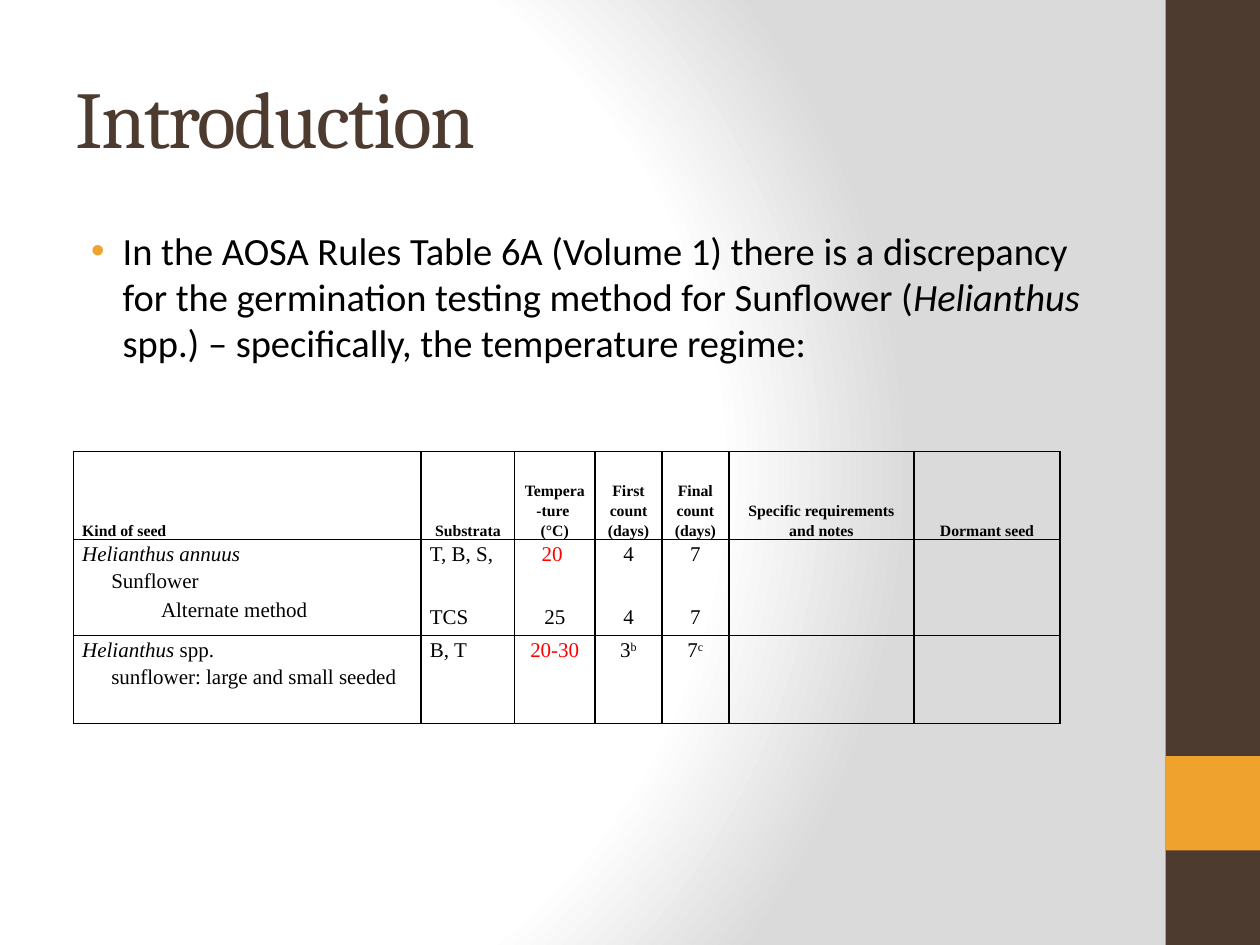
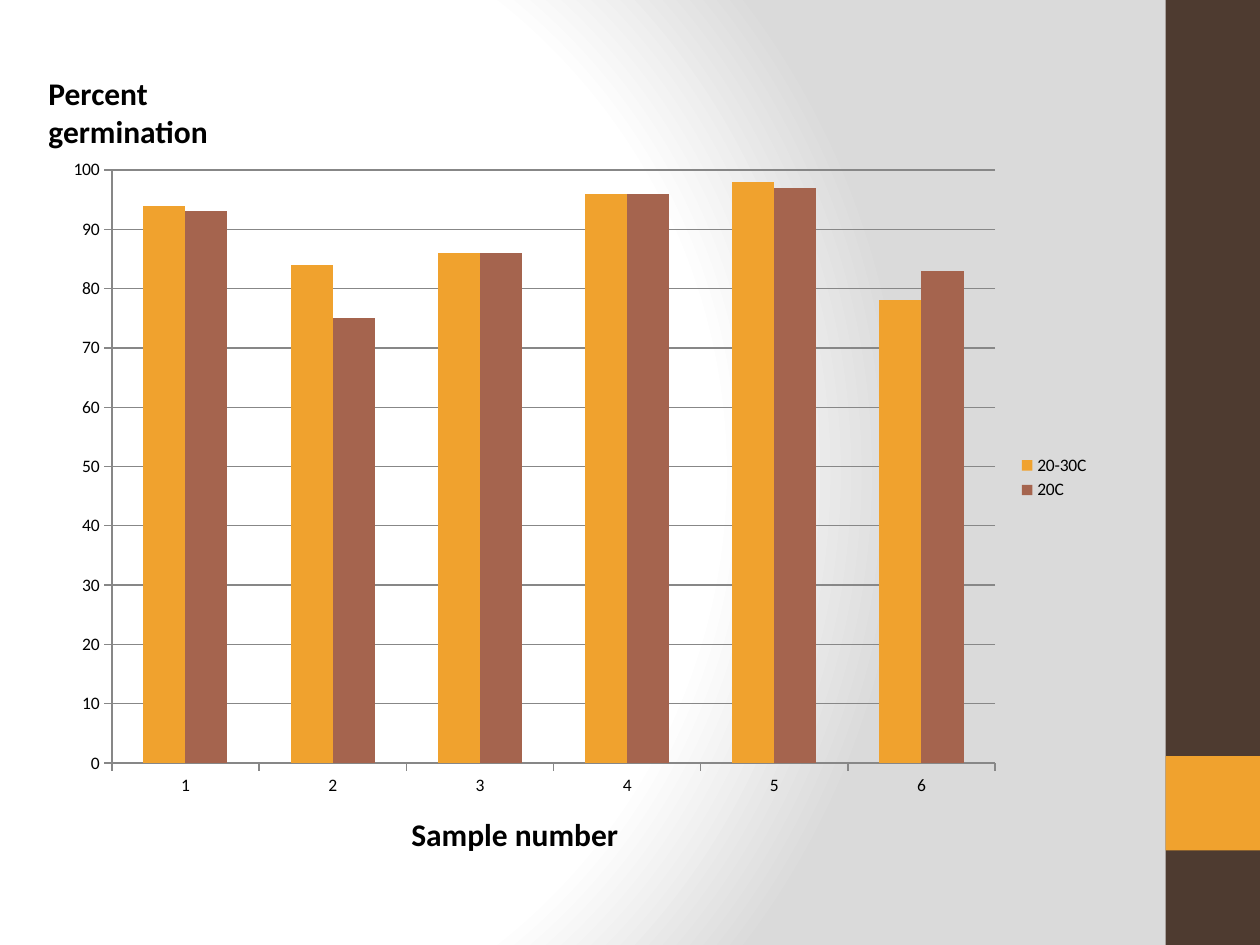
from dataclasses import dataclass
from typing import NamedTuple

from lxml import etree
from pptx import Presentation
from pptx import slide as s
from pptx import table as t
from pptx import util as u
from pptx.chart import data as d
from pptx.dml import color as c
from pptx.enum import chart as ch
from pptx.enum import shapes as sh
from pptx.enum import text as tx
from pptx.oxml import ns, parse_xml
from pptx.text import text as tt

Pt = u.Pt
CENTER = tx.PP_ALIGN.CENTER
LEFT = tx.PP_ALIGN.LEFT


@dataclass(frozen=True)
class Theme:
    brown: str = "4E3B30"
    orange: str = "F0A22E"
    rust: str = "A5644E"
    red: str = "FF0000"
    black: str = "000000"
    white: str = "FFFFFF"
    gray: str = "DADADA"
    grid: str = "878787"
    title_font: str = "Cambria"
    body_font: str = "Calibri"
    table_font: str = "Times New Roman"
    title_size: float = 46
    body_size: float = 22
    label_size: float = 18
    cell_size: float = 12
    chart_size: float = 10
    header_size: float = 9


THEME = Theme()


class Area(NamedTuple):
    left: float
    top: float
    width: float
    height: float

    def lengths(self) -> list[u.Length]:
        return [Pt(value) for value in self]


class Band(NamedTuple):
    area: Area
    color: str


class Span(NamedTuple):
    text: str
    italic: bool = False
    color: str = THEME.black
    raised: bool = False


class Line(NamedTuple):
    spans: tuple[Span, ...]
    indent: float = 0
    before: float = 0
    after: float = 0


class Label(NamedTuple):
    text: str
    area: Area
    size: float
    indent: float = 0
    font: str = THEME.body_font
    color: str = THEME.black
    bold: bool = True
    anchor: tx.MSO_ANCHOR = tx.MSO_ANCHOR.TOP


BANDS = (
    Band(Area(666, 0, 54, 540), THEME.brown),
    Band(Area(666, 432, 54, 54), THEME.orange),
)
TITLE = Label("Introduction", Area(36, 21.6, 600, 90), THEME.title_size, 0,
              THEME.title_font, THEME.brown, False, tx.MSO_ANCHOR.MIDDLE)
BODY_AREA = Area(36, 126, 600, 144)
BODY = Line((
    Span("In the AOSA Rules Table 6A (Volume 1) there is a discrepancy "
         "for the germination testing method for Sunflower ("),
    Span("Helianthus ", italic=True),
    Span("spp.) – specifically, the temperature regime:"),
))

TABLE_AREA = Area(42, 258, 563.8, 155.5)
COLUMN_WIDTHS = (198.7, 53.3, 46.1, 38.2, 38.2, 105.8, 83.5)
ROW_HEIGHTS = (50.4, 54.7, 50.4)
HEADERS = (
    ("Kind of seed",), ("Substrata",), ("Tempera-ture ", "(°C)"),
    ("First count (days)",), ("Final count (days)",),
    ("Specific requirements and notes",), ("Dormant seed",),
)


def value(*spans: Span, before: float = 1.3) -> Line:
    return Line(spans, before=before, after=1.4)


def alternate(text: str) -> Line:
    return value(Span(text), before=19.3)


SEED_ROWS = (
    (
        (Line((Span("Helianthus annuus", italic=True),), before=1.3),
         Line((Span("Sunflower"),), indent=16.6, after=1.4),
         Line((Span("Alternate method"),), indent=45, after=1.4)),
        (value(Span("T, B, S,")), alternate("TCS")),
        (value(Span("20 ", color=THEME.red)), alternate("25")),
        (value(Span("4")), alternate("4")),
        (value(Span("7")), alternate("7")),
    ),
    (
        (Line((Span("Helianthus ", italic=True), Span("spp.")), before=1.3),
         Line((Span("sunflower: large and small seeded"),), indent=16.6, after=1.4)),
        (value(Span("B, T")),),
        (value(Span("20-30", color=THEME.red)),),
        (value(Span("3"), Span("b", raised=True)),),
        (value(Span("7"), Span("c", raised=True)),),
    ),
)

CHART_AREA = Area(30, 84, 600, 378)
GERMINATION = {
    "20-30C": ((94, 84, 86, 96, 98, 78), THEME.orange),
    "20C": ((93, 75, 86, 96, 97, 83), THEME.rust),
}
AXIS_LABELS = (
    Label("Percent germination", Area(12, 39, 126, 42), THEME.label_size, 8.6),
    Label("Sample number", Area(228, 462, 174, 29), THEME.label_size),
)


def rgb(color: str) -> c.RGBColor:
    return c.RGBColor.from_string(color)


def style_font(font: tt.Font, name: str, size: float, color: str, bold: bool = False) -> None:
    font.name = name
    font.size = Pt(size)
    font.bold = bold
    font.color.rgb = rgb(color)


def set_indent(para: tt._Paragraph, left: float, first: float = 0) -> None:
    properties = para._p.get_or_add_pPr()
    properties.set("marL", str(Pt(left)))
    properties.set("indent", str(Pt(first)))


def set_background(master: s.SlideMaster) -> None:
    master.background.fill.gradient()
    gradient = master.element.find(".//" + ns.qn("a:gradFill"))
    stops = "".join(
        f'<a:gs pos="{position * 1000}"><a:srgbClr val="{color}"/></a:gs>'
        for position, color in ((0, THEME.white), (75, THEME.white), (100, THEME.gray))
    )
    gradient.getparent().replace(gradient, parse_xml(
        f'<a:gradFill {ns.nsdecls("a")} rotWithShape="1"><a:gsLst>{stops}</a:gsLst>'
        '<a:path path="circle"><a:fillToRect l="20000" t="50000" r="100000" b="50000"/>'
        '</a:path></a:gradFill>'))


def add_page(deck: Presentation) -> s.Slide:
    page = deck.slides.add_slide(deck.slide_layouts[6])
    for band in BANDS:
        box = page.shapes.add_shape(sh.MSO_SHAPE.RECTANGLE, *band.area.lengths())
        box.shadow.inherit = False
        box.fill.solid()
        box.fill.fore_color.rgb = rgb(band.color)
        box.line.fill.background()
    return page


def add_label(page: s.Slide, label: Label) -> tt._Run:
    frame = page.shapes.add_textbox(*label.area.lengths()).text_frame
    frame.word_wrap = True
    frame.vertical_anchor = label.anchor
    frame.text = label.text
    para = frame.paragraphs[0]
    set_indent(para, label.indent)
    span = para.runs[0]
    style_font(span.font, label.font, label.size, label.color, label.bold)
    return span


def write_spans(para: tt._Paragraph, spans: tuple[Span, ...], font: str, size: float,
                bold: bool = False) -> None:
    for span in spans:
        run = para.add_run()
        run.text = span.text
        style_font(run.font, font, size, span.color, bold)
        run.font.italic = span.italic
        if span.raised:
            run._r.get_or_add_rPr().set("baseline", "30000")


def add_body(page: s.Slide) -> None:
    frame = page.shapes.add_textbox(*BODY_AREA.lengths()).text_frame
    frame.word_wrap = True
    para = frame.paragraphs[0]
    write_spans(para, BODY.spans, THEME.body_font, THEME.body_size)
    set_indent(para, 27, -18)
    properties = para._p.get_or_add_pPr()
    bullet_color = etree.SubElement(properties, ns.qn("a:buClr"))
    etree.SubElement(bullet_color, ns.qn("a:srgbClr"), val=THEME.orange)
    etree.SubElement(properties, ns.qn("a:buFont"), typeface="Arial")
    etree.SubElement(properties, ns.qn("a:buChar"), char="•")


def frame_cell(cell: t._Cell) -> None:
    properties = cell._tc.get_or_add_tcPr()
    for side in ("lnL", "lnR", "lnT", "lnB"):
        properties.append(parse_xml(
            f'<a:{side} {ns.nsdecls("a")} w="{Pt(1)}"><a:solidFill>'
            f'<a:srgbClr val="{THEME.black}"/></a:solidFill></a:{side}>'))
    cell.fill.background()
    cell.margin_left = cell.margin_right = Pt(5)
    cell.margin_top = cell.margin_bottom = 0


def fill_cell(cell: t._Cell, lines: tuple[Line, ...], align: tx.PP_ALIGN,
              size: float, bold: bool) -> None:
    frame = cell.text_frame
    for index, line in enumerate(lines):
        para = frame.add_paragraph() if index else frame.paragraphs[0]
        para.alignment = align
        para.line_spacing = 1.15
        para.space_before = Pt(line.before)
        para.space_after = Pt(line.after)
        set_indent(para, line.indent)
        write_spans(para, line.spans, THEME.table_font, size, bold)


def add_seed_table(page: s.Slide) -> None:
    table = page.shapes.add_table(
        len(ROW_HEIGHTS), len(COLUMN_WIDTHS), *TABLE_AREA.lengths()).table
    table.first_row = table.horz_banding = False
    for column, width in zip(table.columns, COLUMN_WIDTHS):
        column.width = Pt(width)
    for row, height in zip(table.rows, ROW_HEIGHTS):
        row.height = Pt(height)
    for cell in table.iter_cells():
        frame_cell(cell)
    for index, texts in enumerate(HEADERS):
        cell = table.cell(0, index)
        cell.vertical_anchor = tx.MSO_ANCHOR.BOTTOM
        lines = tuple(Line((Span(text),)) for text in texts)
        fill_cell(cell, lines, CENTER if index else LEFT, THEME.header_size, True)
    for row_index, seed_row in enumerate(SEED_ROWS, start=1):
        for index, lines in enumerate(seed_row):
            fill_cell(table.cell(row_index, index), lines,
                      CENTER if index > 1 else LEFT, THEME.cell_size, False)


def add_germination_chart(page: s.Slide) -> None:
    data = d.CategoryChartData()
    data.categories = [str(number) for number in range(1, 7)]
    for name, (values, _) in GERMINATION.items():
        data.add_series(name, values)
    chart = page.shapes.add_chart(
        ch.XL_CHART_TYPE.COLUMN_CLUSTERED, *CHART_AREA.lengths(), data).chart
    style_font(chart.font, THEME.body_font, THEME.chart_size, THEME.black)
    chart.has_title = False
    chart.has_legend = True
    chart.legend.position = ch.XL_LEGEND_POSITION.RIGHT
    chart.legend.include_in_layout = False
    plot = chart.plots[0]
    plot.gap_width = 150
    plot.overlap = 0
    plot.vary_by_categories = False
    for series, (_, color) in zip(plot.series, GERMINATION.values()):
        series.format.fill.solid()
        series.format.fill.fore_color.rgb = rgb(color)
    scale = chart.value_axis
    scale.minimum_scale, scale.maximum_scale, scale.major_unit = 0, 100, 10
    scale.has_major_gridlines = True
    for axis in (chart.category_axis, scale):
        axis.major_tick_mark = ch.XL_TICK_MARK.OUTSIDE
    for ruled in (chart.category_axis, scale, scale.major_gridlines):
        ruled.format.line.color.rgb = rgb(THEME.grid)
        ruled.format.line.width = Pt(0.75)


def main() -> None:
    deck = Presentation()
    deck.slide_width, deck.slide_height = Pt(720), Pt(540)
    set_background(deck.slide_master)

    introduction = add_page(deck)
    title = add_label(introduction, TITLE)
    title._r.get_or_add_rPr().set("spc", "-100")
    add_body(introduction)
    add_seed_table(introduction)

    results = add_page(deck)
    add_germination_chart(results)
    for label in AXIS_LABELS:
        add_label(results, label)

    deck.save("out.pptx")


if __name__ == "__main__":
    main()
